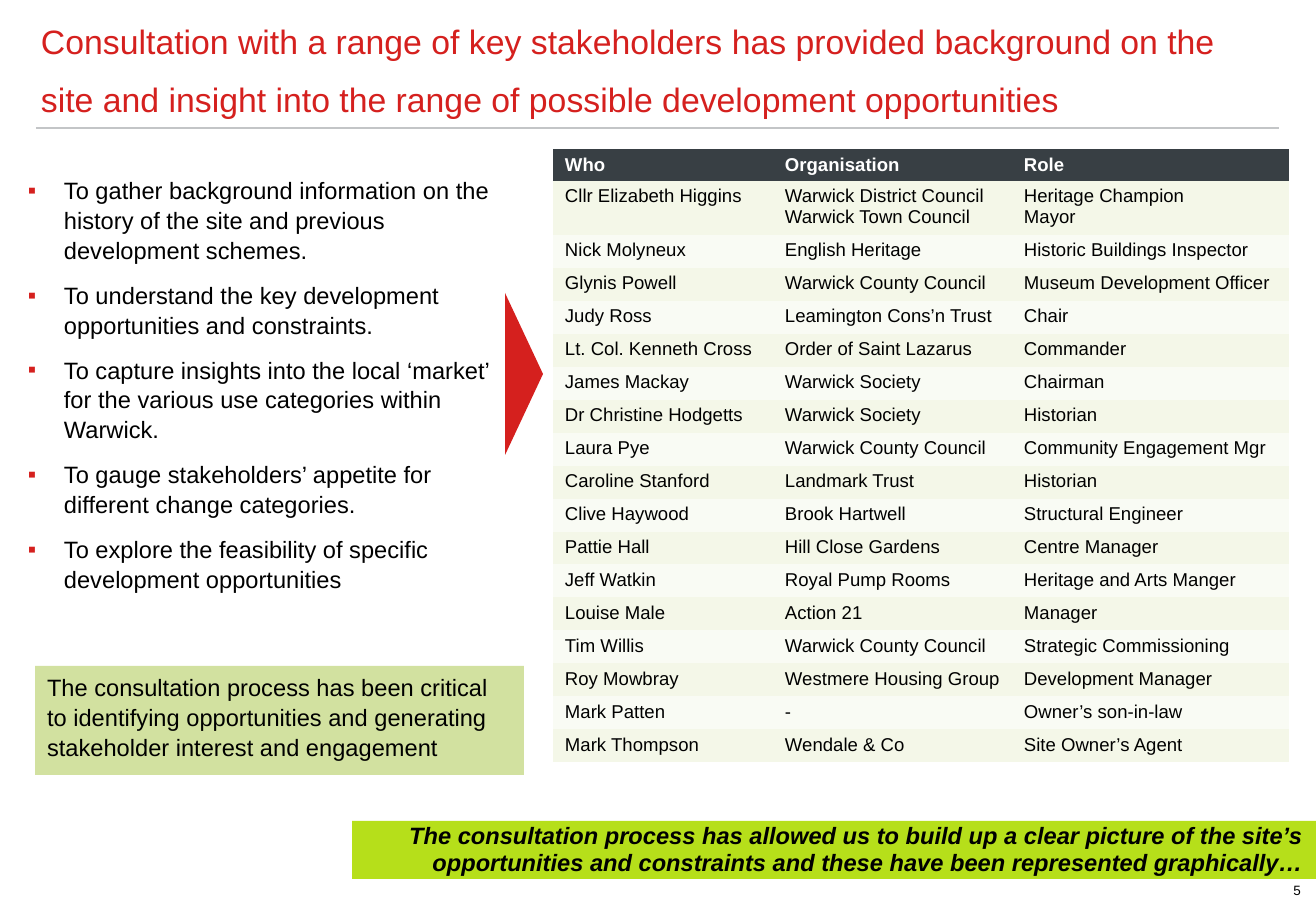
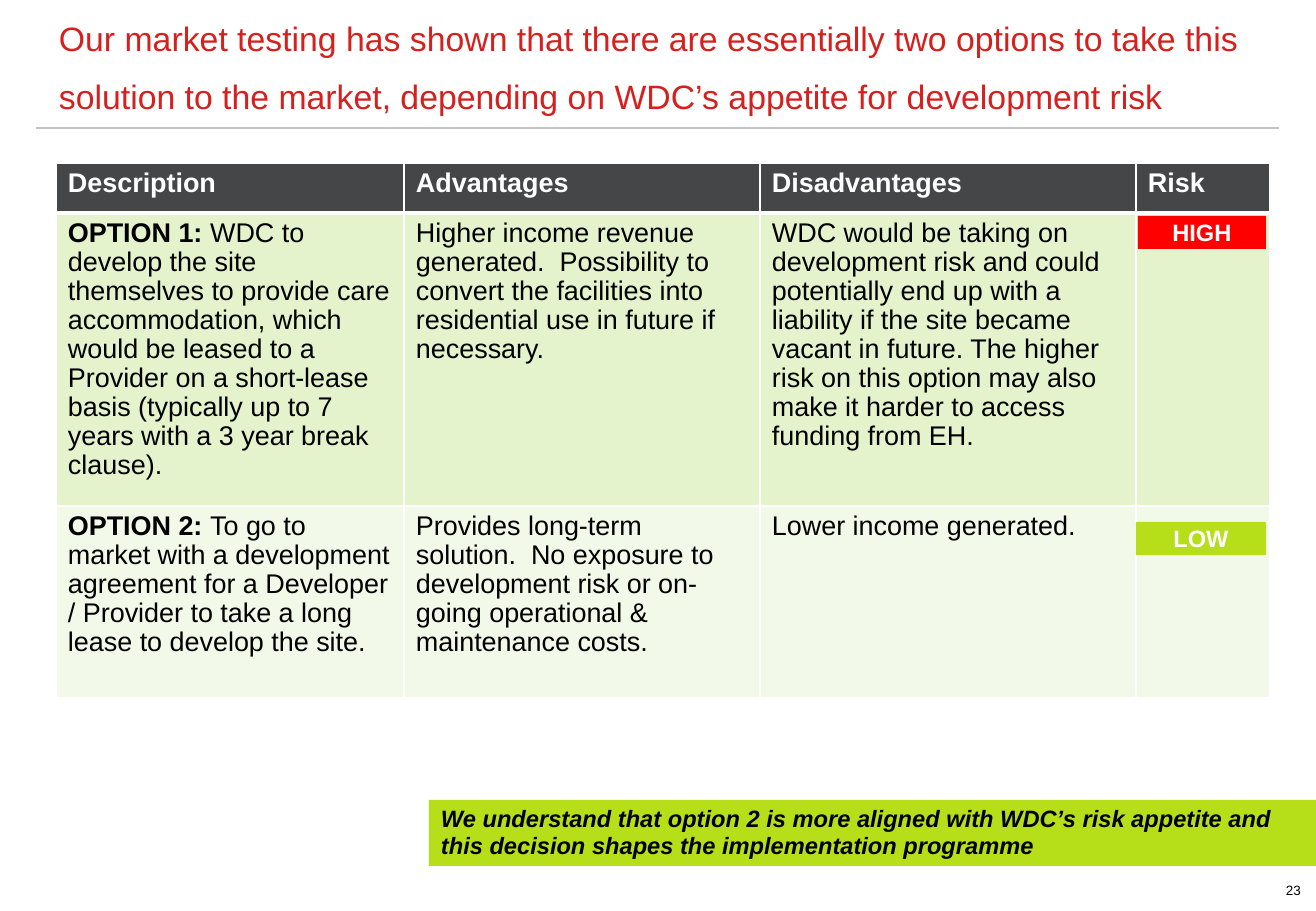
from dataclasses import dataclass, replace
from typing import NamedTuple

from lxml.etree import SubElement
from pptx import Presentation
from pptx.dml.color import RGBColor
from pptx.enum.shapes import MSO_CONNECTOR as Connector, MSO_SHAPE as Preset
from pptx.enum.text import MSO_ANCHOR as Anchor, PP_ALIGN as Align
from pptx.oxml import parse_xml
from pptx.oxml.ns import nsdecls, qn
from pptx.util import Pt

EMU_PER_PX = 7526
NO_GRID_STYLE = "{2D5ABB26-0587-4C30-8999-92F81FD0307C}"


@dataclass(frozen=True)
class Theme:
    font: str = "Arial"
    red: str = "D5201E"
    lime: str = "B6DF1A"
    sage: str = "D2E1A0"
    alert: str = "FF0000"
    rule: str = "C3C5C7"
    black: str = "000000"
    white: str = "FFFFFF"
    title_size: int = 20
    option_size: int = 16
    body_size: int = 14
    contact_size: int = 11
    number_size: int = 8


THEME = Theme()


@dataclass(frozen=True)
class TextStyle:
    size: int = THEME.body_size
    color: str = THEME.black
    bold: bool = False
    italic: bool = False
    align: Align = Align.LEFT
    spacing: object = 1.0
    before: int = 0
    after: int = 0
    bullet: str = ""


class Box(NamedTuple):
    left: int
    top: int
    width: int
    height: int


class Run(NamedTuple):
    text: str
    bold: bool = False


class TableLook(NamedTuple):
    size: int
    header: str
    bands: tuple
    grid: bool


TITLE = TextStyle(THEME.title_size, THEME.red, spacing=Pt(34))
BODY = TextStyle(spacing=1.05, before=3, after=6)
BULLET = replace(BODY, bullet="▪")
BANNER = TextStyle(bold=True, italic=True, spacing=0.95)
BADGE = TextStyle(color=THEME.white, bold=True, align=Align.CENTER)
NUMBER = TextStyle(THEME.number_size, align=Align.RIGHT)
CONTACT_LOOK = TableLook(THEME.contact_size, "383F44", ("F4F7E8", "F9FBF4"), False)
OPTION_LOOK = TableLook(THEME.option_size, "444648", ("E5F3CD", "F3F9E8"), True)

CONTACTS = [
    ("Who", "Organisation", "Role"),
    ("Cllr Elizabeth Higgins", "Warwick District Council\nWarwick Town Council", "Heritage Champion\nMayor"),
    ("Nick Molyneux", "English Heritage", "Historic Buildings Inspector"),
    ("Glynis Powell", "Warwick County Council", "Museum Development Officer"),
    ("Judy Ross", "Leamington Cons’n Trust", "Chair"),
    ("Lt. Col. Kenneth Cross", "Order of Saint Lazarus", "Commander"),
    ("James Mackay", "Warwick Society", "Chairman"),
    ("Dr Christine Hodgetts", "Warwick Society", "Historian"),
    ("Laura Pye", "Warwick County Council", "Community Engagement Mgr"),
    ("Caroline Stanford", "Landmark Trust", "Historian"),
    ("Clive Haywood", "Brook Hartwell", "Structural Engineer"),
    ("Pattie Hall", "Hill Close Gardens", "Centre Manager"),
    ("Jeff Watkin", "Royal Pump Rooms", "Heritage and Arts Manger"),
    ("Louise Male", "Action 21", "Manager"),
    ("Tim Willis", "Warwick County Council", "Strategic Commissioning"),
    ("Roy Mowbray", "Westmere Housing Group", "Development Manager"),
    ("Mark Patten", "-", "Owner’s son-in-law"),
    ("Mark Thompson", "Wendale & Co", "Site Owner’s Agent"),
]

OPTIONS = [
    ("Description", "Advantages", "Disadvantages", "Risk"),
    (
        [Run("OPTION 1: ", True), Run("WDC to develop the site themselves to provide care accommodation, which would be leased to a Provider on a short-lease basis (typically up to 7 years with a 3 year break clause).")],
        "Higher income revenue generated.  Possibility to convert the facilities into residential use in future if necessary.",
        "WDC would be taking on development risk and could potentially end up with a liability if the site became vacant in future. The higher risk on this option may also make it harder to access funding from EH.",
        "",
    ),
    (
        [Run("OPTION 2: ", True), Run("To go to market with a development agreement for a Developer / Provider to take a long lease to develop the site.")],
        "Provides long-term solution.  No exposure to development risk or on-going operational & maintenance costs.",
        "Lower income generated.",
        "",
    ),
]

AIMS = [
    "To gather background information on the history of the site and previous development schemes.",
    "To understand the key development opportunities and constraints.",
    "To capture insights into the local ‘market’ for the various use categories within Warwick.",
    "To gauge stakeholders’ appetite for different change categories.",
    "To explore the feasibility of specific development opportunities",
]


def px(length):
    return length * EMU_PER_PX


def emu(box):
    return [px(length) for length in box]


def rgb(color):
    return RGBColor.from_string(color)


def set_bullet(paragraph, character):
    properties = paragraph._p.get_or_add_pPr()
    properties.set("marL", str(px(36)))
    properties.set("indent", str(px(-36)))
    color = SubElement(SubElement(properties, qn("a:buClr")), qn("a:srgbClr"))
    color.set("val", THEME.red)
    SubElement(properties, qn("a:buFont")).set("typeface", THEME.font)
    SubElement(properties, qn("a:buChar")).set("char", character)


def write(frame, paragraphs, style):
    for index, content in enumerate(paragraphs):
        paragraph = frame.paragraphs[0] if index == 0 else frame.add_paragraph()
        if style.bullet:
            set_bullet(paragraph, style.bullet)
        paragraph.alignment = style.align
        paragraph.line_spacing = style.spacing
        paragraph.space_before = Pt(style.before if index else 0)
        paragraph.space_after = Pt(style.after)
        paragraph.font.size = Pt(style.size)
        for part in [Run(content, style.bold)] if isinstance(content, str) else content:
            if not part.text:
                continue
            run = paragraph.add_run()
            run.text = part.text
            run.font.name = THEME.font
            run.font.size = Pt(style.size)
            run.font.bold = part.bold
            run.font.italic = style.italic
            run.font.color.rgb = rgb(style.color)


def set_frame(frame, anchor, inset_x, inset_y, wrap=True):
    frame.word_wrap = wrap
    frame.vertical_anchor = anchor
    frame.margin_left = frame.margin_right = px(inset_x)
    frame.margin_top = frame.margin_bottom = px(inset_y)


def add_text(slide, box, paragraphs, style, anchor=Anchor.TOP, inset_x=12, inset_y=6, wrap=True):
    frame = slide.shapes.add_textbox(*emu(box)).text_frame
    set_frame(frame, anchor, inset_x, inset_y, wrap)
    write(frame, paragraphs, style)


def add_block(slide, box, fill, preset=Preset.RECTANGLE):
    shape = slide.shapes.add_shape(preset, *emu(box))
    shape.shadow.inherit = False
    shape.fill.solid()
    shape.fill.fore_color.rgb = rgb(fill)
    shape.line.fill.background()
    return shape


def add_panel(slide, box, fill, text, style, anchor=Anchor.MIDDLE, inset_y=6):
    frame = add_block(slide, box, fill).text_frame
    set_frame(frame, anchor, 12, inset_y)
    write(frame, [text], style)


def add_pointer(slide, box):
    center_x, center_y = box.left + box.width // 2, box.top + box.height // 2
    upright = Box(center_x - box.height // 2, center_y - box.width // 2, box.height, box.width)
    add_block(slide, upright, THEME.red, Preset.ISOSCELES_TRIANGLE).rotation = 90


def set_borders(cell, bottom_width):
    properties = cell._tc.get_or_add_tcPr()
    widths = {"lnL": 1, "lnR": 1, "lnT": 1, "lnB": bottom_width}
    for index, (side, width) in enumerate(widths.items()):
        properties.insert(index, parse_xml(
            f'<a:{side} {nsdecls("a")} w="{Pt(width)}"><a:solidFill>'
            f'<a:srgbClr val="{THEME.white}"/></a:solidFill></a:{side}>'))


def add_grid(slide, left, top, widths, heights, rows, look):
    box = Box(left, top, sum(widths), sum(heights))
    graphic = slide.shapes.add_table(len(rows), len(widths), *emu(box))
    table = graphic.table
    table.horz_banding = False
    next(graphic._element.iter(qn("a:tableStyleId"))).text = NO_GRID_STYLE
    for column, width in zip(table.columns, widths):
        column.width = px(width)
    for row, height in zip(table.rows, heights):
        row.height = px(height)
    body = TextStyle(look.size, spacing=0.97)
    header = replace(body, color=THEME.white, bold=True)
    for row_index, contents in enumerate(rows):
        is_header = row_index == 0
        for column_index, content in enumerate(contents):
            cell = table.cell(row_index, column_index)
            cell.margin_left = cell.margin_right = px(12)
            cell.margin_top, cell.margin_bottom = px(6), px(4)
            cell.fill.solid()
            cell.fill.fore_color.rgb = rgb(look.header if is_header else look.bands[(row_index - 1) % 2])
            if look.grid:
                set_borders(cell, 3 if is_header else 1)
            paragraphs = content.split("\n") if isinstance(content, str) else [content]
            write(cell.text_frame, paragraphs, header if is_header else body)


def start_slide(presentation, title, title_box, number):
    slide = presentation.slides.add_slide(presentation.slide_layouts[6])
    rule = slide.shapes.add_connector(Connector.STRAIGHT, px(36), px(128), px(1279), px(128))
    rule.line.color.rgb = rgb(THEME.rule)
    rule.line.width = Pt(0.75)
    SubElement(rule._element.spPr, qn("a:effectLst"))
    add_text(slide, title_box, [title], TITLE, Anchor.BOTTOM, inset_x=6)
    add_text(slide, Box(1281, 876, 20, 28), [number], NUMBER, inset_x=0, wrap=False)
    return slide


def build_consultation(presentation):
    slide = start_slide(
        presentation,
        "Consultation with a range of key stakeholders has provided background on the site and insight into the range of possible development opportunities",
        Box(35, 34, 1245, 91), "5")
    add_panel(
        slide, Box(352, 821, 964, 58), THEME.lime,
        "The consultation process has allowed us to build up a clear picture of the site’s opportunities and constraints and these have been represented graphically…",
        replace(BANNER, align=Align.RIGHT))
    heights = [32, 54] + [33] * (len(CONTACTS) - 2)
    add_grid(slide, 553, 149, [220, 239, 277], heights, CONTACTS, CONTACT_LOOK)
    add_text(slide, Box(16, 169, 490, 459), AIMS, BULLET)
    add_pointer(slide, Box(505, 293, 38, 162))
    add_panel(
        slide, Box(35, 666, 489, 109), THEME.sage,
        "The consultation process has been critical to identifying opportunities and generating stakeholder interest and engagement",
        BODY, Anchor.TOP)


def build_options(presentation):
    slide = start_slide(
        presentation,
        "Our market testing has shown that there are essentially two options to take this solution to the market, depending on WDC’s appetite for development risk",
        Box(53, 0, 1263, 122), "23")
    add_panel(
        slide, Box(429, 800, 887, 66), THEME.lime,
        "We understand that option 2 is more aligned with WDC’s risk appetite and this decision shapes the implementation programme",
        BANNER)
    add_grid(slide, 56, 163, [348, 356, 376, 134], [50, 281, 192], OPTIONS, OPTION_LOOK)
    add_panel(slide, Box(1138, 216, 128, 33), THEME.alert, "HIGH", BADGE, inset_y=0)
    add_panel(slide, Box(1136, 522, 130, 33), THEME.lime, "LOW", BADGE, inset_y=0)


def main():
    presentation = Presentation()
    presentation.slide_width, presentation.slide_height = px(1316), px(911)
    build_consultation(presentation)
    build_options(presentation)
    presentation.save("out.pptx")


if __name__ == "__main__":
    main()
